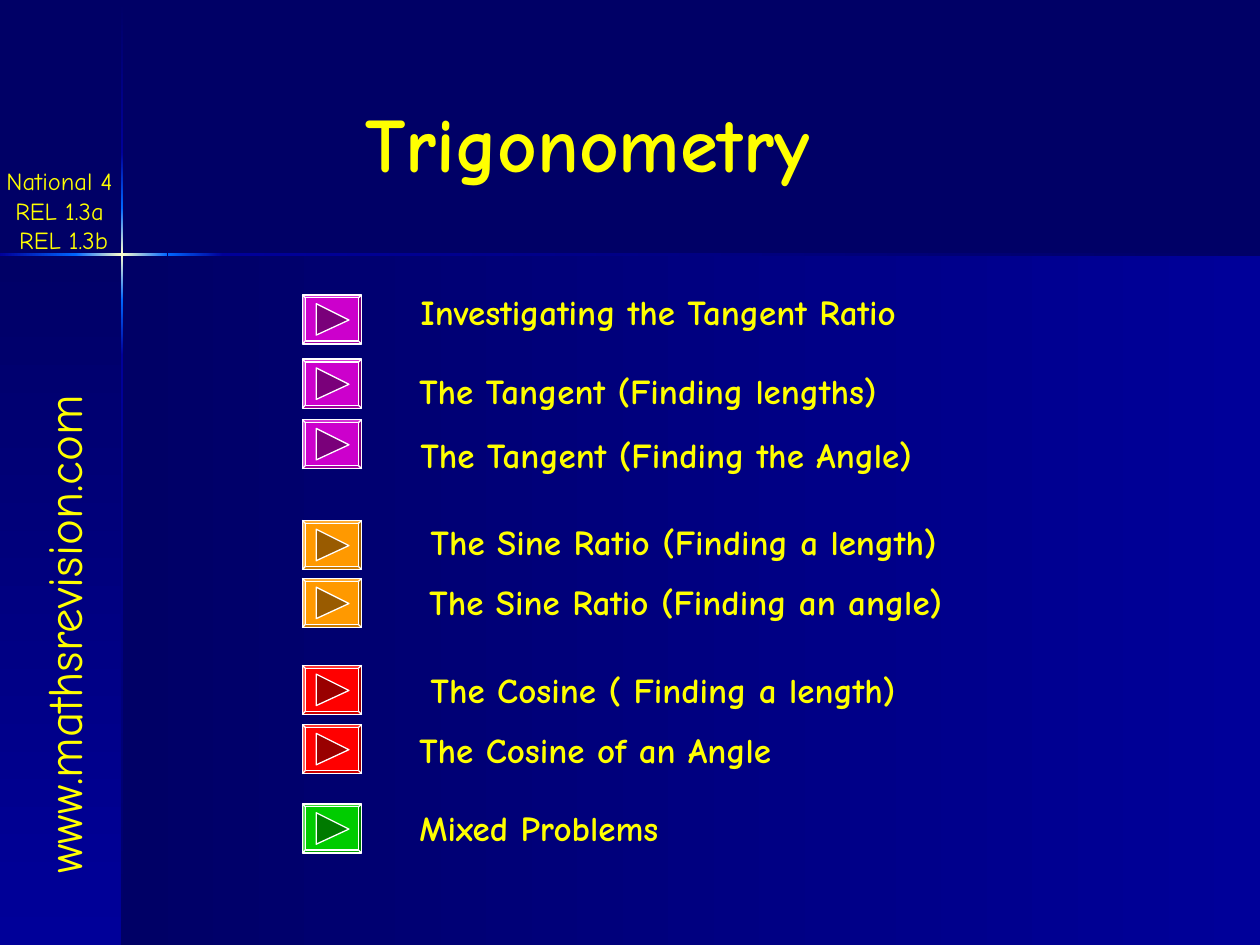
import copy
import dataclasses

import pptx
import pptx.dml.color
import pptx.enum.shapes
import pptx.enum.text
import pptx.util

Inches = pptx.util.Inches
Color = pptx.dml.color.RGBColor
Shapes = pptx.enum.shapes.MSO_SHAPE
Align = pptx.enum.text.PP_ALIGN


@dataclasses.dataclass(frozen=True)
class Theme:
    font: str = "Comic Neue"
    text: str = "FFFF00"
    navy: str = "000066"
    blue: str = "000099"
    glow: str = "0066FF"
    spark: str = "FFFFCC"
    outline: str = "FFFFFF"
    tangent: str = "CC00CC"
    sine: str = "FF9900"
    cosine: str = "FF0000"
    mixed: str = "00CC00"
    title_size: int = 44
    address_size: int = 28
    topic_size: int = 20
    course_size: int = 14


THEME = Theme()
LEFT_TO_RIGHT, DOWNWARD = 0, 270
BUTTON_LEFT, BUTTON_WIDTH, BUTTON_HEIGHT = 2.4, 0.47, 0.39

DARK_TO_BLUE = (THEME.navy, THEME.blue)
BLUE_TO_DARK = (THEME.blue, THEME.navy)
BLUE_TO_GLOW = (THEME.blue, THEME.glow)
GLOW_TO_BLUE = (THEME.glow, THEME.blue)
SPARKLE = (THEME.glow, THEME.spark, THEME.glow)

BANDS = [
    (0.97, 2.02, 9.03, 5.48, DARK_TO_BLUE, LEFT_TO_RIGHT),
    (0, 2.02, 0.97, 5.48, DARK_TO_BLUE, DOWNWARD),
    (0.96, 0.01, 0.02, 1.2, DARK_TO_BLUE, DOWNWARD),
    (0.96, 2.82, 0.02, 4.68, BLUE_TO_DARK, DOWNWARD),
    (1.77, 2.01, 8.23, 0.02, BLUE_TO_DARK, LEFT_TO_RIGHT),
    (0.96, 2.38, 0.02, 0.44, GLOW_TO_BLUE, DOWNWARD),
    (0.96, 1.21, 0.02, 0.44, BLUE_TO_GLOW, DOWNWARD),
    (0.96, 1.65, 0.02, 0.73, SPARKLE, DOWNWARD),
    (0, 2.01, 0.61, 0.02, BLUE_TO_GLOW, LEFT_TO_RIGHT),
    (1.33, 2.01, 0.44, 0.02, GLOW_TO_BLUE, LEFT_TO_RIGHT),
    (0.6, 2.01, 0.73, 0.02, SPARKLE, LEFT_TO_RIGHT),
]

TOPICS = [
    ("Investigating the Tangent Ratio", 3.24, 2.26, 4.51, 2.34, THEME.tangent),
    ("The Tangent (Finding lengths)", 3.23, 2.88, 4.23, 2.85, THEME.tangent),
    ("The Tangent (Finding the Angle)", 3.24, 3.39, 4.57, 3.33, THEME.tangent),
    ("The Sine Ratio (Finding a length)", 3.32, 4.08, 4.68, 4.13, THEME.sine),
    ("The Sine Ratio (Finding an angle)", 3.31, 4.56, 4.68, 4.59, THEME.sine),
    ("The Cosine ( Finding a length)", 3.32, 5.26, 4.25, 5.28, THEME.cosine),
    ("The Cosine of an Angle", 3.23, 5.73, 3.34, 5.75, THEME.cosine),
    ("Mixed Problems", 3.23, 6.35, 2.3, 6.38, THEME.mixed),
]


def apply(target, values):
    for name, value in values.items():
        setattr(target, name, value)


def add_band(page, left, top, width, height, colors, angle):
    band = page.shapes.add_shape(
        Shapes.RECTANGLE, Inches(left), Inches(top), Inches(width), Inches(height))
    band.shadow.inherit = False
    band.line.fill.background()
    band.fill.gradient()
    band.fill.gradient_angle = angle
    if len(colors) == 3:
        last = band.fill.gradient_stops[1].color._xFill
        last.addnext(copy.deepcopy(last))
    for index, (stop, color) in enumerate(zip(band.fill.gradient_stops, colors)):
        stop.color.rgb = Color.from_string(color)
        stop.position = index / (len(colors) - 1)


def add_text(page, lines, left, top, width, height, size,
             bold=False, align=Align.LEFT, wrap=False, rotation=0):
    box = page.shapes.add_textbox(
        Inches(left), Inches(top), Inches(width), Inches(height))
    box.rotation = rotation
    apply(box.text_frame, {
        "text": "\n".join(lines),
        "word_wrap": wrap,
        "auto_size": pptx.enum.text.MSO_AUTO_SIZE.SHAPE_TO_FIT_TEXT,
    })
    for para in box.text_frame.paragraphs:
        para.alignment = align
        for span in para.runs:
            apply(span.font, {
                "name": THEME.font, "size": pptx.util.Pt(size), "bold": bold})
            span.font.color.rgb = Color.from_string(THEME.text)


def paint(shape, color):
    shape.shadow.inherit = False
    shape.fill.solid()
    shape.fill.fore_color.rgb = color
    shape.line.color.rgb = Color.from_string(THEME.outline)
    shape.line.width = pptx.util.Pt(0.75)


def add_button(page, top, color):
    face = Color.from_string(color)
    bevel = page.shapes.add_shape(
        Shapes.BEVEL, Inches(BUTTON_LEFT), Inches(top),
        Inches(BUTTON_WIDTH), Inches(BUTTON_HEIGHT))
    bevel.adjustments[0] = 0.06
    paint(bevel, face)
    left, right = BUTTON_LEFT + 0.11, BUTTON_LEFT + 0.37
    outline = page.shapes.build_freeform(
        Inches(left), Inches(top + 0.07), scale=1.0)
    outline.add_line_segments([
        (Inches(right), Inches(top + 0.2)),
        (Inches(left), Inches(top + 0.32)),
    ], close=True)
    paint(outline.convert_to_shape(), Color(*(int(part * 0.6) for part in face)))


def main():
    deck = pptx.Presentation()
    apply(deck, {"slide_width": Inches(10), "slide_height": Inches(7.5)})
    page = deck.slides.add_slide(deck.slide_layouts[6])
    page.background.fill.solid()
    page.background.fill.fore_color.rgb = Color.from_string(THEME.navy)

    for band in BANDS:
        add_band(page, *band)
    add_text(page, ["www.mathsrevision.com"], -1.69, 4.55, 4.39, 0.57,
             THEME.address_size, rotation=270)
    add_text(page, ["Trigonometry"], 2.8, 0.71, 4.11, 0.84,
             THEME.title_size, bold=True, wrap=True)
    add_text(page, ["National 4 ", "REL 1.3a ", "REL 1.3b"], -0.09, 1.27, 1.19, 0.8,
             THEME.course_size, align=Align.CENTER)
    for label, left, top, width, button_top, color in TOPICS:
        add_text(page, [label], left, top, width, 0.44, THEME.topic_size, bold=True)
        add_button(page, button_top, color)
    deck.save("out.pptx")


if __name__ == "__main__":
    main()
